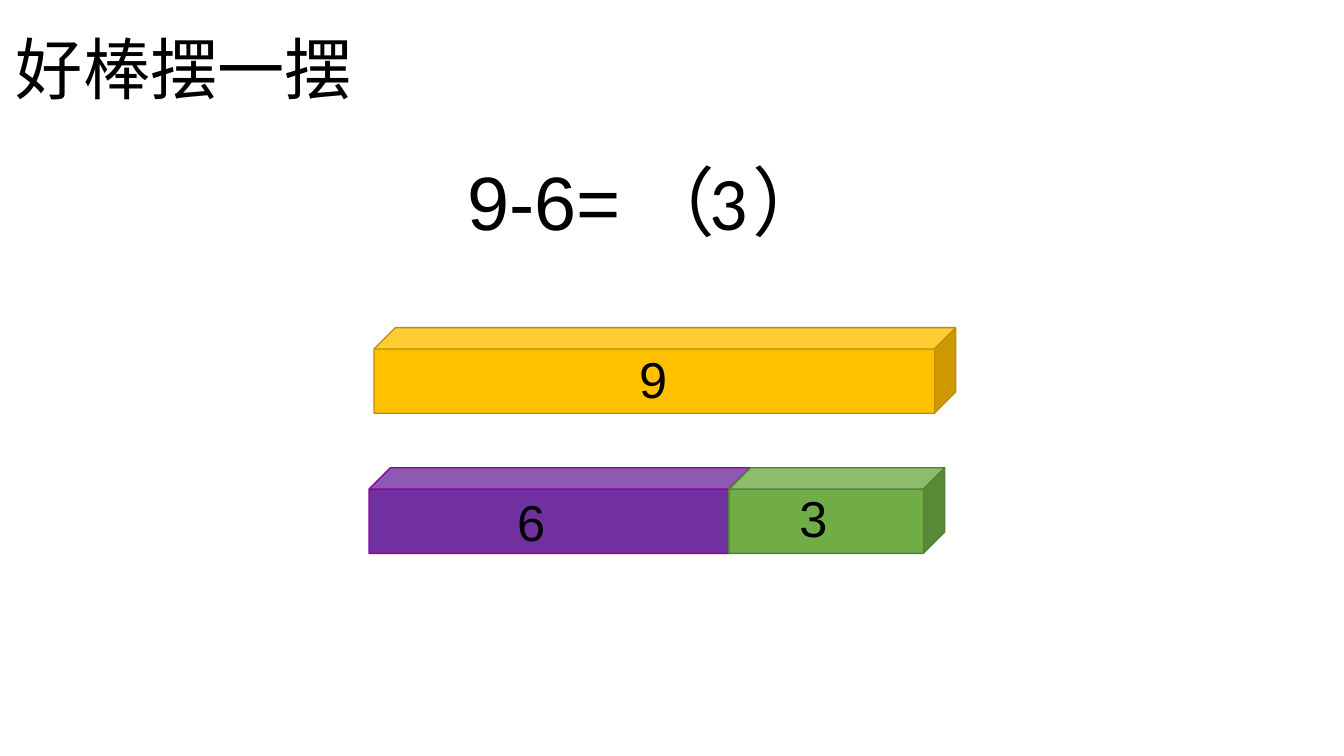
from dataclasses import dataclass

from lxml import etree
from pptx import Presentation
from pptx import util as u
from pptx.dml.color import RGBColor
from pptx.enum import shapes, text
from pptx.oxml.ns import qn

PX = 9144


@dataclass(frozen=True)
class Theme:
    """Fonts, type sizes and colours of the slide."""
    latin: str = "Arial"
    answer: str = "Calibri"
    chinese: str = "Noto Sans CJK JP"
    title_size: int = 48
    equation_size: int = 54
    bar_size: int = 36
    ink: str = "000000"
    nine: tuple = ("FFC000", "BD8E00")
    six: tuple = ("7030A0", "990099")
    three: tuple = ("70AD47", "538035")


THEME = Theme()


def emu(*lengths):
    """Turn px lengths into EMU."""
    return [u.Emu(length * PX) for length in lengths]


def add_text(container, box, parts, size, font):
    """Place a left-aligned text box made of (words, spacing) runs."""
    frame = container.shapes.add_textbox(*emu(*box)).text_frame
    frame.word_wrap = True
    frame.auto_size = text.MSO_AUTO_SIZE.SHAPE_TO_FIT_TEXT
    paragraph = frame.paragraphs[0]
    paragraph.font.size = u.Pt(size)
    paragraph.font.name = font
    paragraph.font.color.rgb = RGBColor.from_string(THEME.ink)
    for words, spacing in parts:
        run = paragraph.add_run()
        run.text = words
        run.font.size = u.Pt(size)
        run.font.name = font
        run.font.color.rgb = RGBColor.from_string(THEME.ink)
        properties = run.font._element
        if spacing:
            properties.set("spc", str(spacing * 100))
        etree.SubElement(properties, qn("a:ea")).set("typeface", THEME.chinese)


def add_title(slide, box):
    """Place the slide title."""
    add_text(slide, box, [("好棒摆一摆", 0)], THEME.title_size, THEME.chinese)


def add_equation(slide, box):
    """Place the subtraction and its answer between the brackets."""
    left, top, width, height = box
    parts = [("9-6=（", 0), (" ", 15), ("）", 0)]
    add_text(slide, box, parts, THEME.equation_size, THEME.latin)
    add_text(slide, (left + 240, top, 103, height), [("3", 0)],
             THEME.equation_size, THEME.answer)


def add_bar(slide, box, number, colors, label):
    """Group a cube with its number, placed by (x, y, width) in the box."""
    left, top, width, height = box
    x, y, label_width = label
    fill, line = (RGBColor.from_string(color) for color in colors)
    group = slide.shapes.add_group_shape()
    cube = group.shapes.add_shape(shapes.MSO_SHAPE.CUBE, *emu(*box))
    cube.shadow.inherit = False
    cube.fill.solid()
    cube.fill.fore_color.rgb = fill
    cube.line.color.rgb = line
    cube.line.width = u.Pt(1)
    add_text(group, (left + x, top + y, label_width, 71), [(number, 0)],
             THEME.bar_size, THEME.latin)


def add_bars(slide, box):
    """Stack the whole bar above its two parts."""
    left, top, width, height = box
    lower = top + 139
    add_bar(slide, (left + 5, top, width, height), "9", THEME.nine, (253, 15, 85))
    add_bar(slide, (left, lower, 378, height), "6", THEME.six, (137, 18, 104))
    add_bar(slide, (left + 357, lower, 214, height), "3", THEME.three, (60, 14, 69))


def main():
    """Build and save the slide."""
    presentation = Presentation()
    presentation.slide_width, presentation.slide_height = emu(1333, 750)
    slide = presentation.slides.add_slide(presentation.slide_layouts[6])
    add_title(slide, (6, 22, 368, 91))
    add_equation(slide, (454, 149, 543, 101))
    add_bars(slide, (366, 325, 577, 85))
    presentation.save("out.pptx")


if __name__ == "__main__":
    main()
